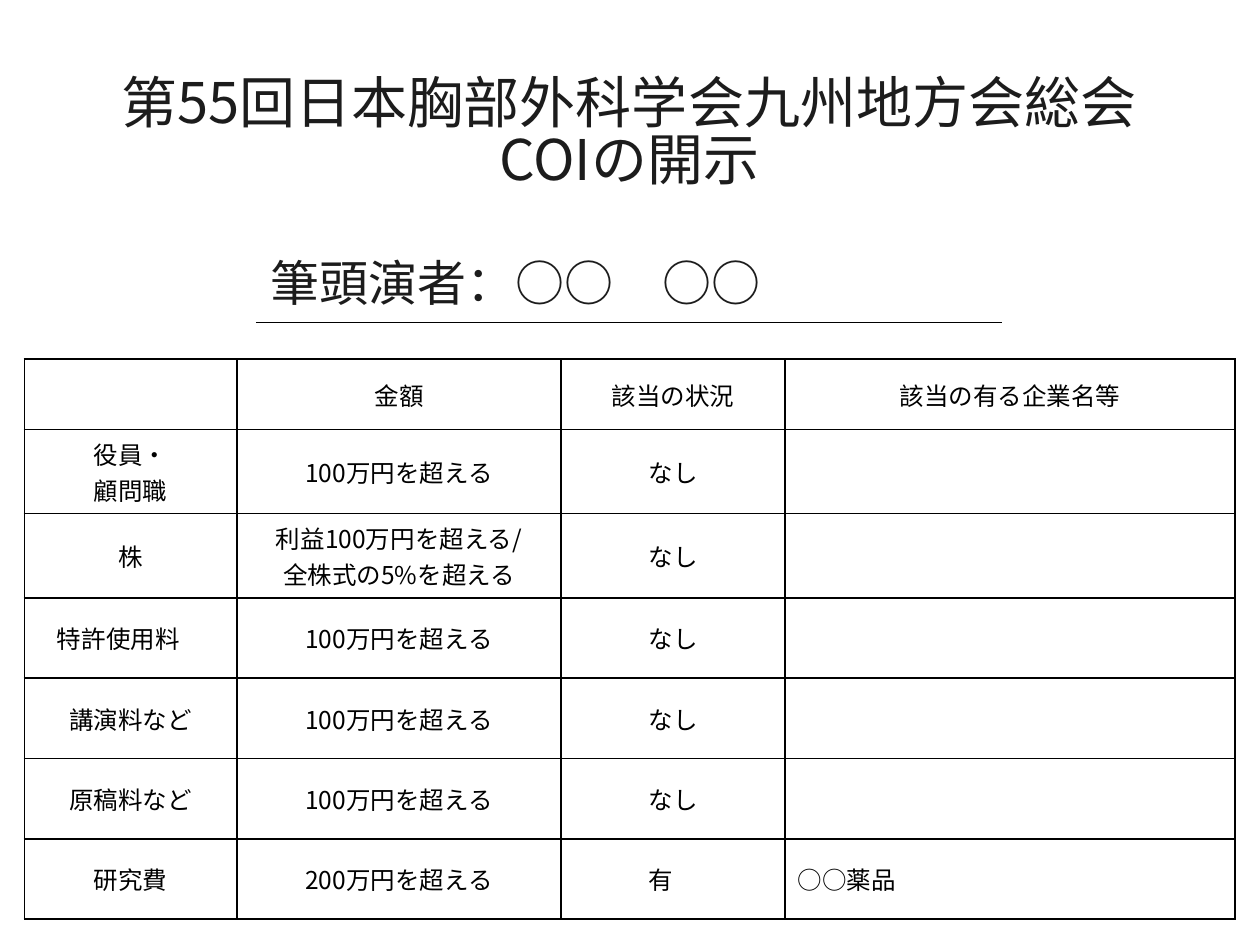
from lxml.etree import SubElement
from pptx import Presentation
from pptx.dml.color import RGBColor
from pptx.enum.shapes import MSO_CONNECTOR as Connector
from pptx.enum.text import MSO_ANCHOR as Anchor, MSO_AUTO_SIZE as AutoSize, PP_ALIGN as Align
from pptx.oxml.ns import qn
from pptx.util import Cm, Pt

FONT = "Noto Sans CJK JP"
COLORS = {"text": "1C1C1C", "line": "000000", "cell": "FFFFFF"}
COLUMN_WIDTHS = [4.29, 6.53, 4.52, 9.07]
HEADER_HEIGHT = 1.42
ROW_HEIGHT = 1.62
OVER_MILLION = "100万円を超える"
ROWS = [
    ["", "金額", "該当の状況", "該当の有る企業名等"],
    ["役員・\v顧問職", OVER_MILLION, "なし", ""],
    ["株", "利益100万円を超える/\v全株式の5%を超える", "なし", ""],
    ["特許使用料　", OVER_MILLION, "なし", ""],
    ["講演料など", OVER_MILLION, "なし", ""],
    ["原稿料など", OVER_MILLION, "なし", ""],
    ["研究費", "200万円を超える", "有　", "○○薬品"],
]


def color(name):
    return RGBColor.from_string(COLORS[name])


def write(frame, text, size=14, fill="text", align=Align.CENTER, spacing=None):
    frame.text = text
    for para in frame.paragraphs:
        para.alignment = align
        if spacing:
            para.line_spacing = spacing
        for span in para.runs:
            span.font.name = FONT
            span.font.size = Pt(size)
            span.font.bold = False
            span.font.color.rgb = color(fill)
            SubElement(span.font._element, qn("a:ea"), typeface=FONT)


def place(box, left, top, width, height):
    box.left, box.top, box.width, box.height = Cm(left), Cm(top), Cm(width), Cm(height)
    frame = box.text_frame
    frame.word_wrap = True
    frame.auto_size = AutoSize.NONE
    frame.vertical_anchor = Anchor.MIDDLE
    return frame


def add_title(page):
    frame = place(page.shapes.title, 1.24, 1.22, 22.89, 3)
    write(frame, "第55回日本胸部外科学会九州地方会総会\nCOIの開示", size=32, spacing=0.84)


def add_speaker(page):
    box = page.shapes.add_textbox(0, 0, 0, 0)
    frame = place(box, 5.21, 4.95, 15.09, 1.45)
    write(frame, "筆頭演者：○○　○○", size=28, align=Align.LEFT)


def add_rule(page, left, right, top):
    rule = page.shapes.add_connector(Connector.STRAIGHT, Cm(left), Cm(top), Cm(right), Cm(top))
    rule.line.color.rgb = color("line")
    rule.line.width = Pt(1)
    SubElement(rule._element.spPr, qn("a:effectLst"))


def add_borders(cell):
    properties = cell._tc.get_or_add_tcPr()
    for side in ("lnL", "lnR", "lnT", "lnB"):
        border = SubElement(properties, qn(f"a:{side}"), w=str(Pt(1)))
        fill = SubElement(border, qn("a:solidFill"))
        SubElement(fill, qn("a:srgbClr"), val=COLORS["line"])


def add_disclosure_table(page):
    heights = [HEADER_HEIGHT] + [ROW_HEIGHT] * (len(ROWS) - 1)
    table = page.shapes.add_table(
        len(ROWS), len(COLUMN_WIDTHS), Cm(0.49), Cm(7.24),
        Cm(sum(COLUMN_WIDTHS)), Cm(sum(heights)),
    ).table
    table.horz_banding = False
    for column, width in zip(table.columns, COLUMN_WIDTHS):
        column.width = Cm(width)
    for row, height, texts in zip(table.rows, heights, ROWS):
        row.height = Cm(height)
        for cell, text in zip(row.cells, texts):
            add_borders(cell)
            cell.fill.solid()
            cell.fill.fore_color.rgb = color("cell")
            cell.vertical_anchor = Anchor.MIDDLE
            write(cell.text_frame, text, fill="line")
    table.cell(len(ROWS) - 1, 3).text_frame.paragraphs[0].alignment = Align.LEFT


def main():
    deck = Presentation()
    deck.slide_width, deck.slide_height = Cm(25.4), Cm(19.05)
    page = deck.slides.add_slide(deck.slide_layouts[5])
    add_disclosure_table(page)
    add_speaker(page)
    add_rule(page, 5.16, 20.19, 6.5)
    add_title(page)
    deck.save("out.pptx")


if __name__ == "__main__":
    main()
